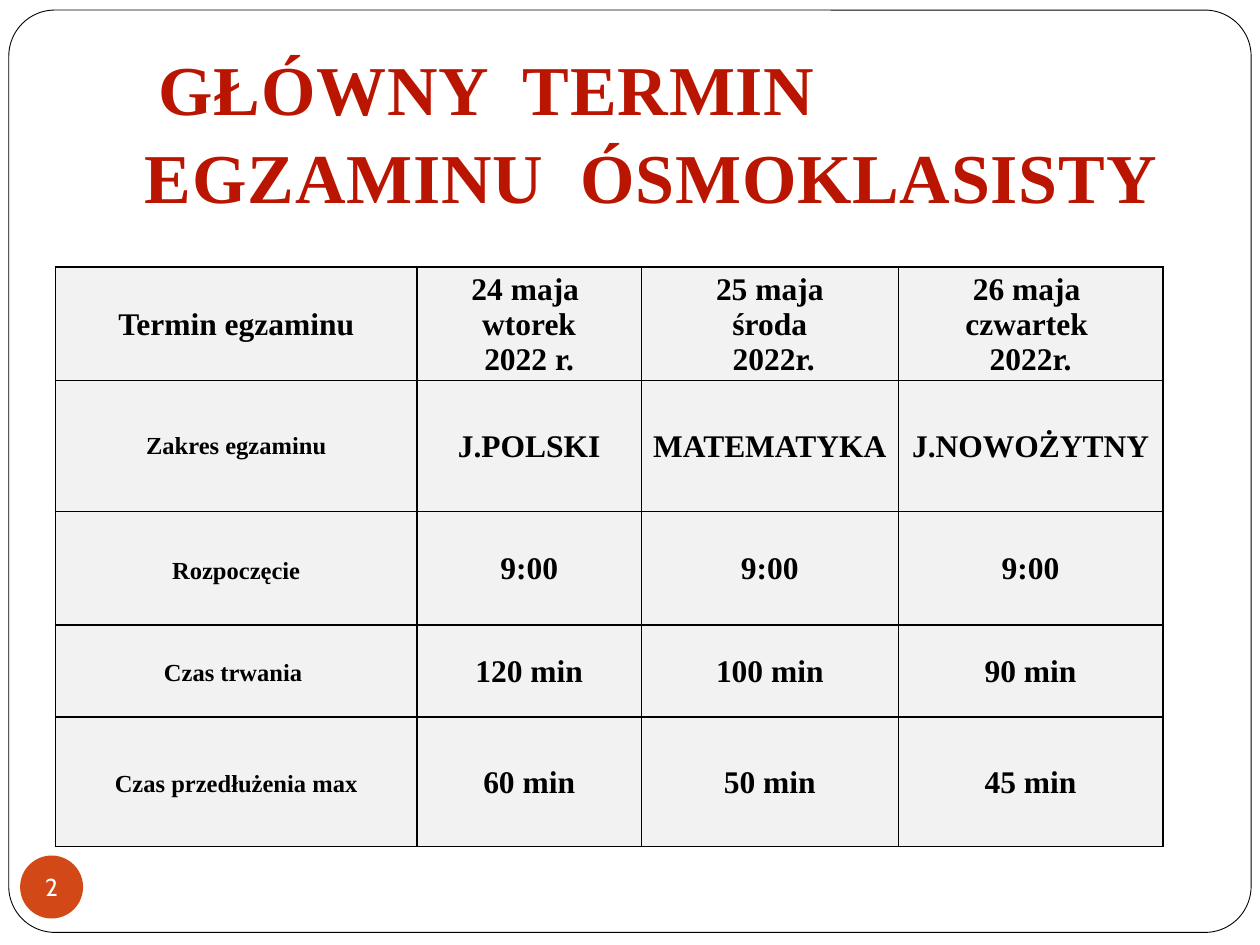
from dataclasses import dataclass

from lxml import etree
from pptx import Presentation
from pptx.dml.color import RGBColor
from pptx.enum import shapes, text
from pptx.oxml import ns
from pptx.util import Inches, Pt


@dataclass(frozen=True)
class Theme:
    paper: RGBColor = RGBColor(0xFF, 0xFF, 0xFF)
    ink: RGBColor = RGBColor(0, 0, 0)
    accent: RGBColor = RGBColor(0xD3, 0x48, 0x17)
    heading: RGBColor = RGBColor(0xBA, 0x15, 0x00)
    cell: RGBColor = RGBColor(0xF2, 0xF2, 0xF2)
    serif: str = "Times New Roman"
    sans: str = "Cabin"
    title_size: int = 40
    value_size: int = 18
    label_size: int = 14


@dataclass(frozen=True)
class ExamRow:
    height: float
    label: str
    values: tuple[str, ...]
    label_size: int
    label_spacing: float = 1.0


THEME = Theme()
COLUMNS = (2.87, 1.78, 2.04, 2.1)
ROWS = (
    ExamRow(0.9, "Termin egzaminu",
            ("24 maja \nwtorek\n2022 r.", "25 maja\nśroda\n 2022r.",
             "26 maja \nczwartek \n2022r."), THEME.value_size),
    ExamRow(1.04, "Zakres egzaminu",
            ("J.POLSKI", "MATEMATYKA", "J.NOWOŻYTNY"), THEME.label_size),
    ExamRow(0.9, "Rozpoczęcie", ("9:00",) * 3, THEME.label_size, 1.15),
    ExamRow(0.73, "Czas trwania ",
            ("120 min", "100 min", "90 min"), THEME.label_size, 1.15),
    ExamRow(1.03, "Czas przedłużenia max",
            ("60 min", "50 min", "45 min"), THEME.label_size, 1.15),
)


def assign(target, values: dict) -> None:
    for name, value in values.items():
        setattr(target, name, value)


def write(frame, words: str, size: int, color: RGBColor, font: str,
          bold: bool = True, spacing: float = 1.0,
          align=text.PP_ALIGN.CENTER) -> None:
    frame.text = words
    for para in frame.paragraphs:
        assign(para, {"alignment": align, "line_spacing": spacing})
        for span in para.runs:
            assign(span.font, {"name": font, "size": Pt(size), "bold": bold})
            span.font.color.rgb = color


def draw_shape(page, kind, bounds: tuple[float, ...], fill: RGBColor):
    shape = page.shapes.add_shape(kind, *map(Inches, bounds))
    shape.shadow.inherit = False
    shape.fill.solid()
    shape.fill.fore_color.rgb = fill
    shape.line.fill.background()
    return shape


def draw_frame(page) -> None:
    frame = draw_shape(page, shapes.MSO_SHAPE.ROUNDED_RECTANGLE,
                       (0.07, 0.08, 9.86, 7.32), THEME.paper)
    frame.adjustments[0] = 0.05
    frame.line.color.rgb = THEME.ink
    frame.line.width = Pt(0.5)
    page.shapes.element.insert(2, frame.element)


def draw_title(page) -> None:
    title = page.shapes.title
    assign(title, {"left": Inches(0.83), "top": Inches(0.3),
                   "width": Inches(8.69), "height": Inches(1.45)})
    assign(title.text_frame, {"word_wrap": True,
                              "auto_size": text.MSO_AUTO_SIZE.NONE,
                              "vertical_anchor": text.MSO_ANCHOR.MIDDLE})
    write(title.text_frame, "GŁÓWNY  TERMIN\vEGZAMINU  ÓSMOKLASISTY",
          THEME.title_size, THEME.heading, THEME.serif,
          spacing=1.05, align=text.PP_ALIGN.LEFT)
    para = title.text_frame.paragraphs[0]
    margins = para._p.get_or_add_pPr()
    margins.set("marL", str(Inches(0.22)))
    margins.set("indent", str(Inches(0.11)))
    for span in para.runs:
        span.font._element.set("spc", "50")


def draw_badge(page) -> None:
    badge = draw_shape(page, shapes.MSO_SHAPE.OVAL,
                       (0.16, 6.79, 0.5, 0.5), THEME.accent)
    assign(badge.text_frame, {"margin_left": 0, "margin_right": 0,
                              "margin_top": 0, "margin_bottom": 0,
                              "word_wrap": False,
                              "vertical_anchor": text.MSO_ANCHOR.MIDDLE})
    write(badge.text_frame, "2", THEME.label_size, THEME.paper,
          THEME.sans, bold=False)


def add_borders(cell) -> None:
    properties = cell._tc.get_or_add_tcPr()
    for side in ("a:lnL", "a:lnR", "a:lnT", "a:lnB"):
        line = etree.SubElement(properties, ns.qn(side), w=str(Pt(1)))
        fill = etree.SubElement(line, ns.qn("a:solidFill"))
        etree.SubElement(fill, ns.qn("a:srgbClr"), val=str(THEME.ink))


def draw_cell(cell, words: str, size: int, spacing: float) -> None:
    assign(cell, {"margin_left": Inches(0.07), "margin_right": Inches(0.07),
                  "margin_top": Inches(0.01), "margin_bottom": 0,
                  "vertical_anchor": text.MSO_ANCHOR.MIDDLE})
    add_borders(cell)
    cell.fill.solid()
    cell.fill.fore_color.rgb = THEME.cell
    write(cell.text_frame, words, size, THEME.ink, THEME.serif,
          spacing=spacing)


def draw_schedule(page) -> None:
    bounds = (0.44, 2.12, sum(COLUMNS), sum(row.height for row in ROWS))
    table = page.shapes.add_table(len(ROWS), len(COLUMNS),
                                  *map(Inches, bounds)).table
    for column, width in zip(table.columns, COLUMNS):
        column.width = Inches(width)
    for index, row in enumerate(ROWS):
        table.rows[index].height = Inches(row.height)
        draw_cell(table.cell(index, 0), row.label, row.label_size,
                  row.label_spacing)
        for place, value in enumerate(row.values, start=1):
            draw_cell(table.cell(index, place), value, THEME.value_size, 1.0)


def main() -> None:
    deck = Presentation()
    assign(deck, {"slide_width": Inches(10), "slide_height": Inches(7.5)})
    page = deck.slides.add_slide(deck.slide_layouts[5])
    draw_frame(page)
    draw_badge(page)
    draw_title(page)
    draw_schedule(page)
    deck.save("out.pptx")


if __name__ == "__main__":
    main()
